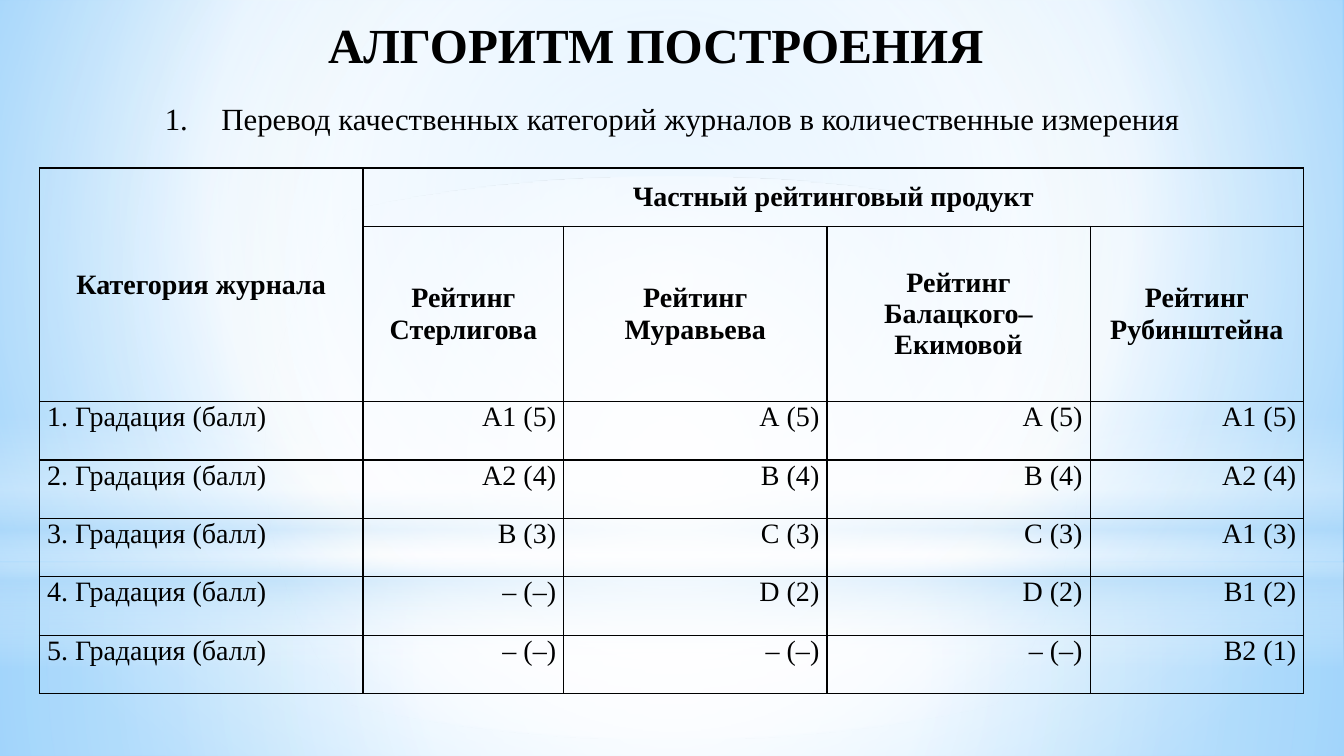
from dataclasses import dataclass

from lxml import etree
from pptx import Presentation
from pptx.dml.color import RGBColor
from pptx.enum.shapes import MSO_SHAPE
from pptx.enum.text import MSO_ANCHOR, PP_ALIGN
from pptx.oxml import parse_xml
from pptx.oxml.ns import nsdecls, qn
from pptx.slide import Slide
from pptx.table import _Cell
from pptx.text.text import TextFrame
from pptx.util import Pt

RECTANGLE, OVAL = MSO_SHAPE.RECTANGLE, MSO_SHAPE.OVAL
CENTER, RIGHT, JUSTIFY = PP_ALIGN.CENTER, PP_ALIGN.RIGHT, PP_ALIGN.JUSTIFY
TOP, MIDDLE = MSO_ANCHOR.TOP, MSO_ANCHOR.MIDDLE

FONT = "Times New Roman"
COLORS = {
    "ink": "000000",
    "white": "FFFFFF",
    "haze": "B4DCFA",
    "sky": "9ED5FF",
    "deep": "5BB9FF",
}
SLIDE_WIDTH, SLIDE_HEIGHT = 960, 540


@dataclass(frozen=True)
class Stop:
    position: int
    color: str
    opacity: int = 100


@dataclass(frozen=True)
class Gradient:
    """Runs out from the focus (left, top, right, bottom), or downwards if there is none."""
    stops: tuple[Stop, ...]
    focus: tuple[int, int, int, int] | None = (50, 50, 50, 50)


@dataclass(frozen=True)
class Glow:
    outline: MSO_SHAPE
    top: float
    height: float
    gradient: Gradient


BACKDROP = Gradient(
    (Stop(0, "sky"), Stop(60, "white"), Stop(100, "deep")), (20, 10, 20, 60)
)
GLOWS = (
    Glow(RECTANGLE, 402, 138, Gradient(
        (Stop(0, "white", 91), Stop(37, "white", 76), Stop(100, "haze", 79)))),
    Glow(RECTANGLE, 0, 402, Gradient(
        (Stop(0, "white", 89), Stop(48, "white", 62), Stop(100, "haze", 79)))),
    Glow(RECTANGLE, 297, 180, Gradient(
        (Stop(0, "white", 0), Stop(29, "white", 30), Stop(45, "haze", 40),
         Stop(55, "white", 26), Stop(65, "haze", 60), Stop(100, "white", 0)), None)),
    Glow(OVAL, 126, 402, Gradient((Stop(0, "white"), Stop(56, "white", 0)))),
)

COLUMN_WIDTHS = (231.1, 143.4, 188, 188, 152.6)
ROW_HEIGHT, HEADER_HEIGHT = 41.7, 125.2
GROUP_HEADER = ("Категория журнала", "Частный рейтинговый продукт", "", "", "")
RATINGS = ("", "Рейтинг Стерлигова", "Рейтинг Муравьева",
           "Рейтинг Балацкого–Екимовой", "Рейтинг Рубинштейна")
GRADES = (
    ("А1 (5)", "А (5)", "А (5)", "A1 (5)"),
    ("А2 (4)", "В (4)", "В (4)", "A2 (4)"),
    ("В (3)", "С (3)", "С (3)", "A1 (3)"),
    ("– (–)", "D (2)", "D (2)", "B1 (2)"),
    ("– (–)", "– (–)", "– (–)", "B2 (1)"),
)


def apply_gradient(owner: etree._Element, gradient: Gradient) -> None:
    """Replace the default gradient fill found inside owner."""
    stops = "".join(
        f'<a:gs pos="{stop.position * 1000}"><a:srgbClr val="{COLORS[stop.color]}">'
        f'<a:alpha val="{stop.opacity * 1000}"/></a:srgbClr></a:gs>'
        for stop in gradient.stops
    )
    if gradient.focus:
        left, top, right, bottom = (edge * 1000 for edge in gradient.focus)
        direction = (f'<a:path path="circle"><a:fillToRect l="{left}" t="{top}" '
                     f'r="{right}" b="{bottom}"/></a:path>')
    else:
        direction = '<a:lin ang="5400000" scaled="0"/>'
    default = next(owner.iter(qn("a:gradFill")))
    default.getparent().replace(default, parse_xml(
        f'<a:gradFill {nsdecls("a")} rotWithShape="1"><a:gsLst>{stops}</a:gsLst>'
        f"{direction}</a:gradFill>"))


def draw_glow(slide: Slide, glow: Glow) -> None:
    shape = slide.shapes.add_shape(
        glow.outline, 0, Pt(glow.top), Pt(SLIDE_WIDTH), Pt(glow.height))
    shape.shadow.inherit = False
    shape.line.fill.background()
    shape.fill.gradient()
    apply_gradient(shape.element, glow.gradient)


def write(frame: TextFrame, text: str, size: float, bold: bool, align: PP_ALIGN) -> None:
    frame.text = text
    frame.word_wrap = True
    paragraph = frame.paragraphs[0]
    paragraph.alignment = align
    for run in paragraph.runs:
        run.font.name = FONT
        run.font.size = Pt(size)
        run.font.bold = bold
        run.font.color.rgb = RGBColor.from_string(COLORS["ink"])


def add_text(slide: Slide, left: float, top: float, width: float, height: float,
             text: str, size: float, bold: bool = False) -> TextFrame:
    frame = slide.shapes.add_textbox(Pt(left), Pt(top), Pt(width), Pt(height)).text_frame
    write(frame, text, size, bold, CENTER)
    return frame


def number_paragraph(frame: TextFrame, indent: float) -> None:
    properties = frame.paragraphs[0]._p.get_or_add_pPr()
    properties.set("marL", str(Pt(indent)))
    properties.set("indent", str(-Pt(indent)))
    for bullet in (
        f'<a:buClr {nsdecls("a")}><a:srgbClr val="{COLORS["ink"]}"/></a:buClr>',
        f'<a:buFont {nsdecls("a")} typeface="{FONT}"/>',
        f'<a:buAutoNum {nsdecls("a")} type="arabicPeriod"/>',
    ):
        properties.append(parse_xml(bullet))


def style_cell(cell: _Cell) -> None:
    """Clear the fill, tighten the margins and rule all four sides."""
    cell.fill.background()
    cell.margin_left = cell.margin_right = Pt(5.4)
    cell.margin_top = cell.margin_bottom = 0
    properties = cell._tc.get_or_add_tcPr()
    for position, side in enumerate(("lnL", "lnR", "lnT", "lnB")):
        properties.insert(position, parse_xml(
            f'<a:{side} {nsdecls("a")} w="{Pt(1)}"><a:solidFill>'
            f'<a:srgbClr val="{COLORS["ink"]}"/></a:solidFill></a:{side}>'))


def add_ratings_table(slide: Slide) -> None:
    grade_rows = [(f"{number}. Градация (балл)", *grades)
                  for number, grades in enumerate(GRADES, start=1)]
    rows = [GROUP_HEADER, RATINGS, *grade_rows]
    heights = [ROW_HEIGHT, HEADER_HEIGHT] + [ROW_HEIGHT] * len(GRADES)
    table = slide.shapes.add_table(
        len(rows), len(COLUMN_WIDTHS), Pt(28.2), Pt(120),
        Pt(sum(COLUMN_WIDTHS)), Pt(sum(heights))).table
    table.first_row = table.horz_banding = False
    for column, width in zip(table.columns, COLUMN_WIDTHS):
        column.width = Pt(width)
    for row_index, (texts, height) in enumerate(zip(rows, heights)):
        table.rows[row_index].height = Pt(height)
        header = row_index < 2
        for column_index, text in enumerate(texts):
            cell = table.cell(row_index, column_index)
            style_cell(cell)
            cell.vertical_anchor = MIDDLE if header else TOP
            body_align = RIGHT if column_index else JUSTIFY
            write(cell.text_frame, text, 20, header, CENTER if header else body_align)
    table.cell(0, 0).merge(table.cell(1, 0))
    table.cell(0, 1).merge(table.cell(0, len(COLUMN_WIDTHS) - 1))


def main() -> None:
    presentation = Presentation()
    presentation.slide_width, presentation.slide_height = Pt(SLIDE_WIDTH), Pt(SLIDE_HEIGHT)
    slide = presentation.slides.add_slide(presentation.slide_layouts[6])
    slide.background.fill.gradient()
    apply_gradient(slide.element, BACKDROP)
    for glow in GLOWS:
        draw_glow(slide, glow)

    title = add_text(slide, 5, 7.2, 927.4, 53.3, "АЛГОРИТМ ПОСТРОЕНИЯ", 35, bold=True)
    title.vertical_anchor = MIDDLE
    title.paragraphs[0].line_spacing = 0.9
    step = add_text(
        slide, 0, 67.7, SLIDE_WIDTH, 33.8,
        "Перевод качественных категорий журналов в количественные измерения", 22)
    number_paragraph(step, 40.5)
    add_ratings_table(slide)
    presentation.save("out.pptx")


if __name__ == "__main__":
    main()
